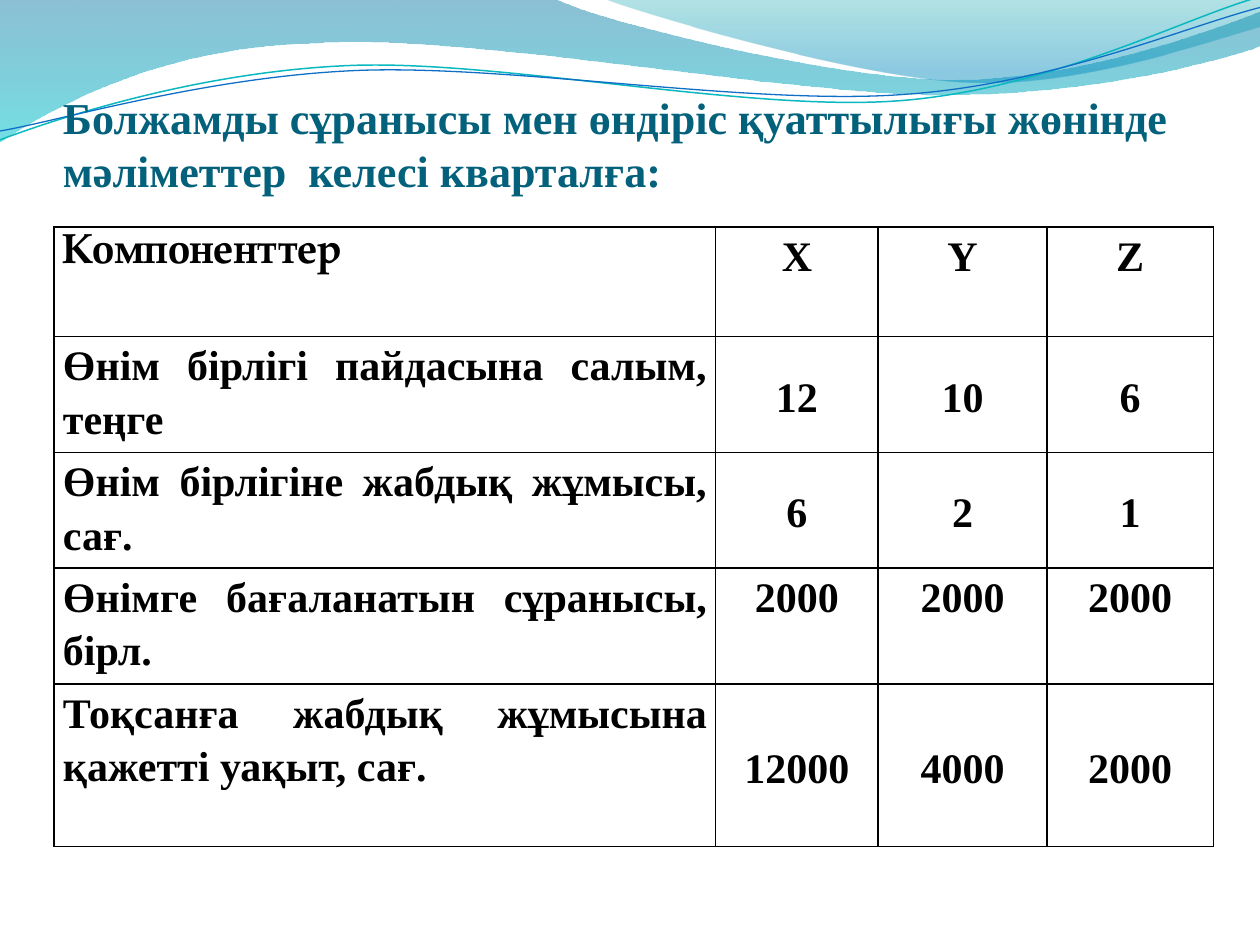
import math
import pptx
import pptx.util
import pptx.dml.color
import pptx.enum.text
import pptx.oxml
import pptx.oxml.ns

Inches = pptx.util.Inches
Align = pptx.enum.text.PP_ALIGN
Anchor = pptx.enum.text.MSO_ANCHOR
qn = pptx.oxml.ns.qn

COLORS = {
    "title": "04617B", "ink": "000000",
    "band_top": "0074A1", "band_bottom": "00C6CF",
    "crest_top": "00A1A9", "crest_bottom": "008BBF",
    "teal_line": "0AB8BF", "blue_line": "0F6FC6",
}


def write_text(frame, text, size=24, font="Times New Roman", color="ink",
               align=Align.LEFT, spacing=1.0):
    para = frame.paragraphs[0]
    para.alignment = align
    para.line_spacing = spacing
    para.space_before = para.space_after = pptx.util.Pt(0)
    span = para.add_run()
    span.text = text
    span.font.size = pptx.util.Pt(size)
    span.font.name = font
    span.font.bold = True
    span.font.color.rgb = pptx.dml.color.RGBColor.from_string(COLORS[color])


def draw_wave(shapes, start, segments, close):
    points = [start] + [point for segment in segments for point in segment]
    outline = [(Inches(x), Inches(y)) for x, y in points]
    builder = shapes.build_freeform(*outline[0])
    builder.add_line_segments(outline[1:], close=close)
    wave = builder.convert_to_shape()
    wave.shadow.inherit = False
    steps = iter(wave.element.spPr.findall(".//" + qn("a:lnTo")))
    for segment in segments:
        group = [next(steps) for point in segment]
        if len(group) == 3:
            curve = group[0].makeelement(qn("a:cubicBezTo"), {})
            group[0].addprevious(curve)
            for step in group:
                curve.append(step[0])
                step.getparent().remove(step)
    return wave


deck = pptx.Presentation()
deck.slide_width = Inches(10)
deck.slide_height = Inches(7.5)
page = deck.slides.add_slide(deck.slide_layouts[6])

filled_waves = [
    ((0, 0), [
        [(4.4, -0.01)],
        [(4.76, 0.17), (6.64, 0.63), (7.58, 0.63)],
        [(8.53, 0.63), (9.58, 0.26), (10, 0.09)],
        [(10.01, 0.36)],
        [(9.83, 0.44), (8.7, 0.76), (7.46, 0.75)],
        [(6.22, 0.75), (3.82, 0.28), (2.57, 0.34)],
        [(1.29, 0.36), (0.46, 0.83), (-0.01, 1.13)],
        [(0, 0)],
    ], [(0, "band_top", 45), (1, "band_bottom", 55)]),
    ((4.79, -0.01), [
        [(5.09, 0.11), (6.82, 0.62), (7.69, 0.65)],
        [(8.56, 0.69), (9.61, 0.32), (10, 0.21)],
        [(10, 0)],
        [(4.79, -0.01)],
    ], [(0, "crest_top", 30), (0.8, "crest_bottom", 45)]),
]
for start, segments, stops in filled_waves:
    wave = draw_wave(page.shapes, start, segments, True)
    wave.line.fill.background()
    wave.fill.gradient()
    wave.fill.gradient_angle = 270
    for stop, (position, color, opacity) in zip(wave.fill.gradient_stops, stops):
        stop.position = position
        stop.color.rgb = pptx.dml.color.RGBColor.from_string(COLORS[color])
    tints = wave.element.spPr.findall(".//" + qn("a:srgbClr"))
    for tint, (position, color, opacity) in zip(tints, stops):
        tint.append(tint.makeelement(qn("a:alpha"), {"val": str(opacity * 1000)}))

line_waves = [
    ((0, 1.11), [
        [(0.48, 0.93), (1.58, 0.57), (2.77, 0.52)],
        [(3.95, 0.47), (5.93, 0.89), (7.13, 0.8)],
        [(8.33, 0.71), (9.38, 0.15), (9.98, -0.02)],
    ], (4.99, 0.58), "teal_line", 0.85),
    ((0, 1.04), [
        [(0.47, 0.96), (1.64, 0.61), (2.83, 0.56)],
        [(4.03, 0.51), (5.97, 0.84), (7.17, 0.75)],
        [(8.36, 0.67), (9.41, 0.21), (10, 0.06)],
    ], (5, 0.59), "blue_line", 0.75),
]
tilt = 2.7
cosine, sine = math.cos(math.radians(tilt)), math.sin(math.radians(tilt))
for start, segments, (middle_x, middle_y), color, width in line_waves:
    (start,), *segments = [
        [(middle_x + (x - middle_x) * cosine - (y - middle_y) * sine,
          middle_y + (x - middle_x) * sine + (y - middle_y) * cosine) for x, y in segment]
        for segment in [[start], *segments]]
    wave = draw_wave(page.shapes, start, segments, False)
    wave.rotation = 360 - tilt
    wave.fill.background()
    wave.line.color.rgb = pptx.dml.color.RGBColor.from_string(COLORS[color])
    wave.line.width = pptx.util.Pt(width)

title = page.shapes.add_textbox(Inches(0.5), Inches(0.6), Inches(9), Inches(0.96))
frame = title.text_frame
frame.word_wrap = True
frame.vertical_anchor = Anchor.BOTTOM
frame.margin_left = frame.margin_right = frame.margin_bottom = 0
frame.margin_top = Inches(0.05)
write_text(frame, "Болжамды сұранысы мен өндіріс қуаттылығы жөнінде мәліметтер  келесі кварталға:",
           size=25.2, color="title")

rows = [
    ("Компоненттер", "X", "Y", "Z"),
    ("Өнім бірлігі пайдасына салым, теңге", "12", "10", "6"),
    ("Өнім бірлігіне жабдық жұмысы, сағ.", "6", "2", "1"),
    ("Өнімге бағаланатын сұранысы, бірл.", "2000", "2000", "2000"),
    ("Тоқсанға жабдық жұмысына қажетті уақыт, сағ.", "12000", "4000", "2000"),
]
widths = [5.25, 1.29, 1.34, 1.32]
heights = [0.87] * 4 + [1.29]
middle_rows = (1, 2, 4)

table = page.shapes.add_table(len(rows), len(widths), Inches(0.43), Inches(1.8),
                              Inches(sum(widths)), Inches(sum(heights))).table
table.first_row = False
table.horz_banding = False
for column, width in zip(table.columns, widths):
    column.width = Inches(width)
for row, height in zip(table.rows, heights):
    row.height = Inches(height)

for r, values in enumerate(rows):
    for c, value in enumerate(values):
        cell = table.cell(r, c)
        cell.margin_left = cell.margin_right = Inches(0.07)
        cell.margin_top = cell.margin_bottom = 0
        cell.vertical_anchor = Anchor.MIDDLE if c and r in middle_rows else Anchor.TOP
        corner = r == c == 0
        align = Align.CENTER if c else Align.LEFT if corner else Align.JUSTIFY
        write_text(cell.text_frame, value, align=align, spacing=1.15,
                   font="TeX Gyre Pagella" if corner else "Times New Roman")
        cell.fill.background()
        properties = cell._tc.get_or_add_tcPr()
        for index, side in enumerate(("lnL", "lnR", "lnT", "lnB")):
            border = pptx.oxml.parse_xml(
                f'<a:{side} {pptx.oxml.ns.nsdecls("a")} w="12700"><a:solidFill>'
                f'<a:srgbClr val="{COLORS["ink"]}"/></a:solidFill></a:{side}>')
            properties.insert(index, border)

deck.save("out.pptx")
